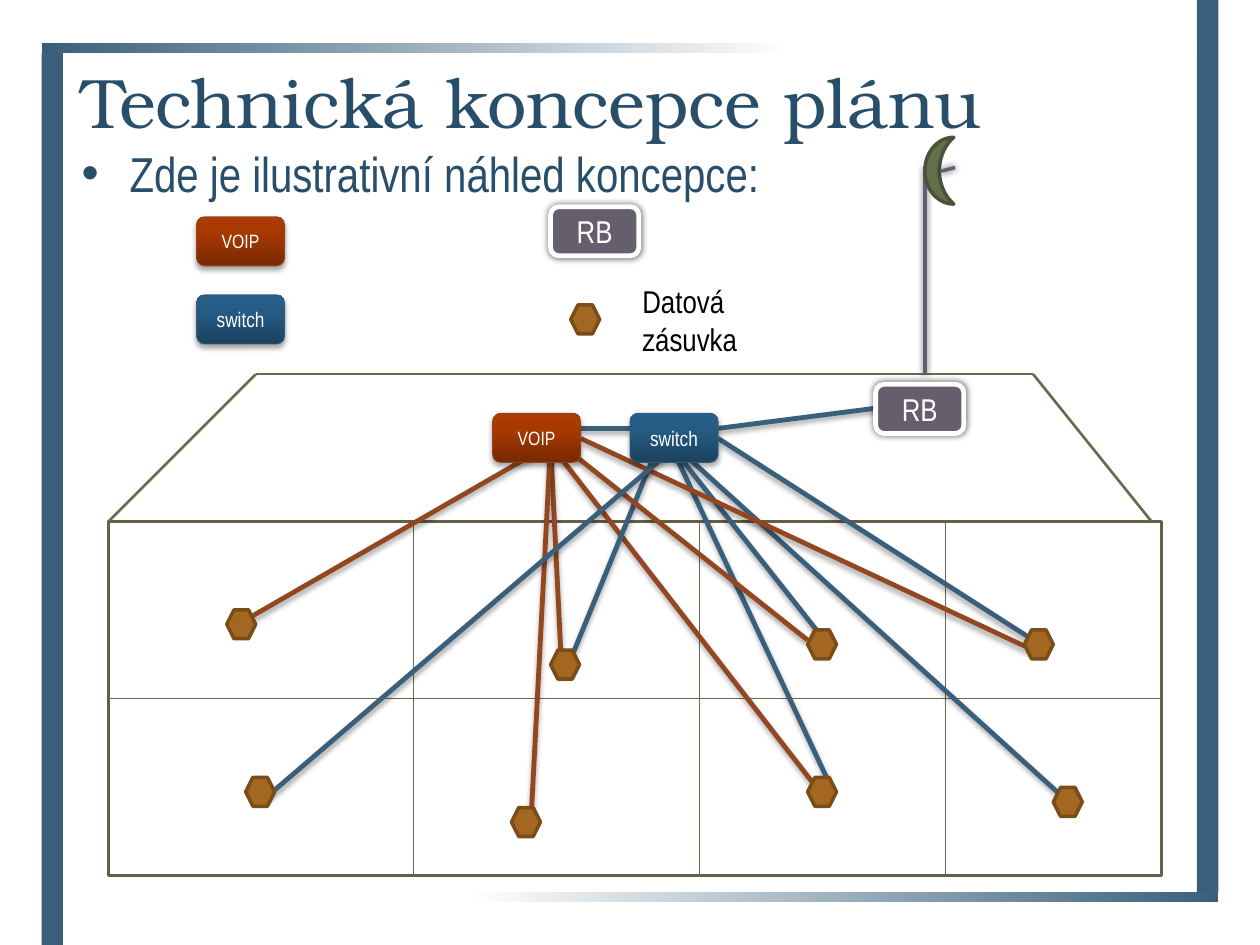
from dataclasses import dataclass
from typing import NamedTuple

from lxml import etree
from pptx import Presentation
from pptx.dml.color import RGBColor
from pptx.enum.shapes import MSO_CONNECTOR, MSO_SHAPE
from pptx.enum.text import MSO_ANCHOR, MSO_AUTO_SIZE, PP_ALIGN
from pptx.oxml.ns import qn
from pptx.util import Inches, Pt

RECT = MSO_SHAPE.RECTANGLE
ROUNDED = MSO_SHAPE.ROUNDED_RECTANGLE
HEXAGON = MSO_SHAPE.HEXAGON
MOON = MSO_SHAPE.MOON
STRAIGHT = MSO_CONNECTOR.STRAIGHT
TOP, MIDDLE, BOTTOM = MSO_ANCHOR.TOP, MSO_ANCHOR.MIDDLE, MSO_ANCHOR.BOTTOM
CENTER = PP_ALIGN.CENTER
GROW = MSO_AUTO_SIZE.SHAPE_TO_FIT_TEXT

BODY_FONT = "Arial Narrow"
TITLE_FONT = "TeX Gyre Bonum"
COLORS = {
    "white": "FFFFFF", "black": "000000", "text": "284E6A",
    "blue": "3A5F7B", "red": "934721",
    "wall": "665E45", "roof": "626D4A",
    "radio": "655E6D", "dish": "646F4D", "dish_edge": "4A5239",
    "socket": "A46721", "socket_edge": "794C18",
    "voip_edge": "93451D", "voip_dark": "782901",
    "voip_mid": "A63802", "voip_light": "AE3B02",
    "switch_edge": "375D7A", "switch_dark": "1B415F",
    "switch_mid": "255B83", "switch_light": "275F8A",
}


class Shadow(NamedTuple):
    alpha: int
    blur: float
    distance: float
    degrees: int


class Cable(NamedTuple):
    color: str
    start: tuple[float, float]
    end: tuple[float, float]


@dataclass(frozen=True)
class Device:
    label: str
    size: int
    fill: str | list[tuple[int, str]]
    edge: str
    edge_width: float
    shadow: Shadow


DROP = Shadow(35, 3.1, 2, 90)
GLOW = Shadow(64, 4, 0, 0)
VOIP = Device("VOIP", 11, [(0, "voip_dark"), (65, "voip_mid"), (100, "voip_light")],
              "voip_edge", 0.5, DROP)
SWITCH = Device("switch", 12, [(0, "switch_dark"), (65, "switch_mid"), (100, "switch_light")],
                "switch_edge", 0.5, DROP)
RADIO = Device("RB", 18, "radio", "white", 2.75, GLOW)
DEVICE_SIZE = (0.7, 0.39)
SOCKET_SIZE = 0.23

DEVICES = [
    (VOIP, 1.56, 1.72), (SWITCH, 1.56, 2.34), (RADIO, 4.37, 1.64),
    (RADIO, 6.95, 3.05), (VOIP, 3.91, 3.28), (SWITCH, 5, 3.28),
]
SOCKETS = [
    (4.53, 2.42),
    (1.8, 4.84), (4.37, 5.16), (6.41, 5), (8.13, 5),
    (1.95, 6.17), (4.06, 6.41), (6.41, 6.17), (8.36, 6.25),
]
CABLES = [
    Cable("red", (4.26, 3.59), (1.95, 4.92)),
    Cable("red", (4.37, 3.52), (4.45, 5.16)),
    Cable("red", (4.3, 3.44), (6.48, 6.25)),
    Cable("blue", (5.23, 3.52), (4.53, 5.23)),
    Cable("blue", (5.16, 3.36), (8.44, 6.33)),
    Cable("blue", (5.35, 3.59), (6.56, 6.17)),
    Cable("blue", (6.95, 3.24), (5.7, 3.4)),
    Cable("blue", (5, 3.4), (4.61, 3.4)),
    Cable("red", (4.37, 3.52), (4.22, 6.41)),
    Cable("blue", (5.31, 3.52), (6.48, 5)),
    Cable("blue", (5.7, 3.48), (8.2, 5.08)),
    Cable("red", (4.53, 3.59), (6.41, 5.08)),
    Cable("red", (4.61, 3.48), (8.2, 5.16)),
    Cable("blue", (5.31, 3.59), (2.11, 6.33)),
]


def rgb(color: str) -> RGBColor:
    return RGBColor.from_string(COLORS[color])


def set_shadow(item, shadow: Shadow | None) -> None:
    """Replace the theme shadow; call once the line is set, as effects follow it."""
    effects = etree.SubElement(item._element.spPr, qn("a:effectLst"))
    if shadow:
        outer = etree.SubElement(
            effects, qn("a:outerShdw"), blurRad=str(Pt(shadow.blur)),
            dist=str(Pt(shadow.distance)), dir=str(shadow.degrees * 60000), rotWithShape="0")
        black = etree.SubElement(outer, qn("a:srgbClr"), val=COLORS["black"])
        etree.SubElement(black, qn("a:alpha"), val=str(shadow.alpha * 1000))


def set_gradient(shape, stops: list[tuple[int, str]], angle: int) -> None:
    """Fill with (percent, colour) stops; the angle runs counter-clockwise."""
    shape.fill.gradient()
    shape.fill.gradient_angle = angle
    stop_list = shape._element.spPr.find(qn("a:gradFill")).find(qn("a:gsLst"))
    for stop in list(stop_list):
        stop_list.remove(stop)
    for percent, color in stops:
        stop = etree.SubElement(stop_list, qn("a:gs"), pos=str(percent * 1000))
        etree.SubElement(stop, qn("a:srgbClr"), val=COLORS[color])


def add_box(slide, preset, box, fill, edge=None, edge_width=0.0, shadow=None, angle=90):
    shape = slide.shapes.add_shape(preset, *map(Inches, box))
    if isinstance(fill, str):
        shape.fill.solid()
        shape.fill.fore_color.rgb = rgb(fill)
    else:
        set_gradient(shape, fill, angle)
    if edge:
        shape.line.color.rgb = rgb(edge)
        shape.line.width = Pt(edge_width)
    else:
        shape.line.fill.background()
    set_shadow(shape, shadow)
    return shape


def add_line(slide, start, end, color: str, width: float, shadow: Shadow | None = None) -> None:
    line = slide.shapes.add_connector(STRAIGHT, *map(Inches, (*start, *end)))
    line.line.color.rgb = rgb(color)
    line.line.width = Pt(width)
    set_shadow(line, shadow)


def write_text(shape, text: str, size: int, color: str, font=BODY_FONT, anchor=TOP):
    shape.text_frame.word_wrap = True
    shape.text_frame.vertical_anchor = anchor
    paragraph = shape.text_frame.paragraphs[0]
    run = paragraph.add_run()
    run.text = text
    for attribute, value in {"name": font, "size": Pt(size)}.items():
        setattr(run.font, attribute, value)
    run.font.color.rgb = rgb(color)
    return paragraph


def add_frame(slide) -> None:
    fade = [(0, "blue"), (65, "white"), (100, "white")]
    add_box(slide, RECT, (9.5, 0, 0.17, 7.08), "blue")
    add_box(slide, RECT, (0.33, 0.42, 0.17, 7.08), "blue")
    add_box(slide, RECT, (0.5, 7.08, 9.17, 0.08), fade, angle=180)
    add_box(slide, RECT, (0.33, 0.34, 9.17, 0.08), fade, angle=0)


def add_headings(slide) -> None:
    title = slide.shapes.add_textbox(*map(Inches, (0.55, 0, 8.83, 1.18)))
    write_text(title, "Technická koncepce plánu", 40, "text", TITLE_FONT, BOTTOM)
    body = slide.shapes.add_textbox(*map(Inches, (0.55, 1.09, 8.83, 4.83)))
    bullet = write_text(body, "Zde je ilustrativní náhled koncepce:", 28, "text")
    properties = bullet._p.get_or_add_pPr()
    properties.set("marL", str(Inches(0.38)))
    properties.set("indent", str(Inches(-0.38)))
    etree.SubElement(properties, qn("a:buFont"), typeface="Arial")
    etree.SubElement(properties, qn("a:buChar"), char="•")


def add_building(slide) -> None:
    left, top, width, height = walls = (0.86, 4.14, 8.36, 2.81)
    add_box(slide, RECT, walls, "white", "wall", 2)
    roof = [(left, top), (2.03, 2.97), (8.2, 2.97), (9.14, top)]
    for start, end in zip(roof, roof[1:]):
        add_line(slide, start, end, "roof", 1.5)
    for x in (3.28, 5.55, 7.5):
        add_line(slide, (x, top), (x, top + height), "roof", 0.5)
    floor = top + height / 2
    add_line(slide, (left, floor), (left + width, floor), "roof", 0.5)


def add_antenna(slide) -> None:
    add_line(slide, (7.34, 2.97), (7.34, 1.33), "radio", 2, GLOW)
    add_box(slide, MOON, (7.34, 1.09, 0.23, 0.53), "dish", "dish_edge", 2)
    add_line(slide, (7.46, 1.36), (7.58, 1.33), "radio", 2, GLOW)


def add_device(slide, device: Device, left: float, top: float) -> None:
    shape = add_box(slide, ROUNDED, (left, top, *DEVICE_SIZE), device.fill,
                    device.edge, device.edge_width, device.shadow)
    write_text(shape, device.label, device.size, "white", anchor=MIDDLE).alignment = CENTER


def main() -> None:
    deck = Presentation()
    deck.slide_width, deck.slide_height = Inches(10), Inches(7.5)
    slide = deck.slides.add_slide(deck.slide_layouts[6])
    add_frame(slide)
    add_headings(slide)
    add_building(slide)
    add_antenna(slide)
    for cable in CABLES:
        add_line(slide, cable.start, cable.end, cable.color, 2.75, DROP)
    for left, top in SOCKETS:
        add_box(slide, HEXAGON, (left, top, SOCKET_SIZE, SOCKET_SIZE), "socket", "socket_edge", 2)
    for device, left, top in DEVICES:
        add_device(slide, device, left, top)
    legend = slide.shapes.add_textbox(*map(Inches, (5, 2.19, 1.33, 0.71)))
    write_text(legend, "Datová zásuvka", 18, "black")
    legend.text_frame.auto_size = GROW
    deck.save("out.pptx")


if __name__ == "__main__":
    main()
